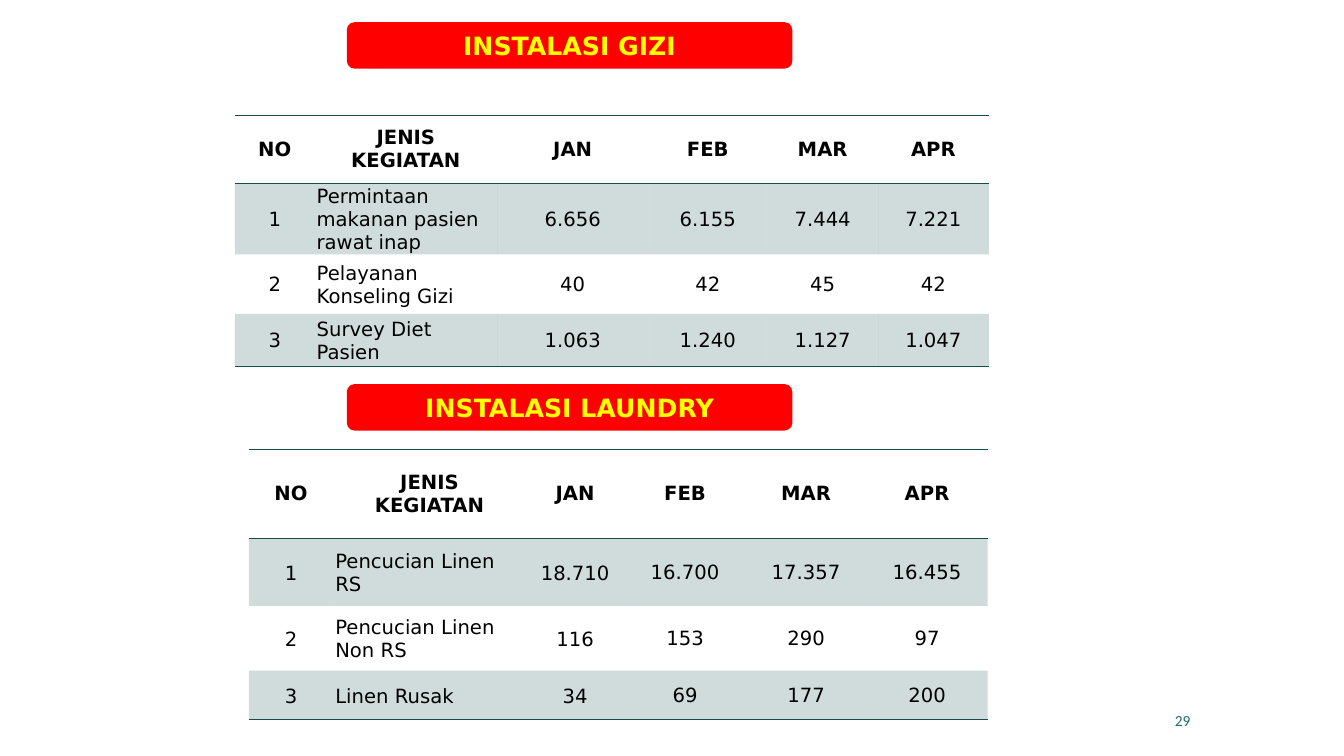
import pptx
import pptx.util
import pptx.dml.color
import pptx.enum.shapes
import pptx.enum.text
import pptx.oxml
import pptx.oxml.ns

Cm = pptx.util.Cm
Pt = pptx.util.Pt
RGBColor = pptx.dml.color.RGBColor
ALIGN = pptx.enum.text.PP_ALIGN
MIDDLE = pptx.enum.text.MSO_ANCHOR.MIDDLE
qn = pptx.oxml.ns.qn

RED = RGBColor(0xFF, 0x00, 0x00)
YELLOW = RGBColor(0xFF, 0xFF, 0x00)
BLACK = RGBColor(0x00, 0x00, 0x00)
TEAL = RGBColor(0x16, 0x4B, 0x4F)
PAGE_TEAL = RGBColor(0x1F, 0x69, 0x6F)
BAND_ALPHA = "20000"
NO_STYLE = "{2D5ABB26-0587-4C30-8999-92F81FD0307C}"

HEADER = ["NO", "JENIS KEGIATAN", "JAN", "FEB", "MAR", "APR"]
NUTRITION = [
    HEADER,
    ["1", "Permintaan makanan pasien rawat inap", "6.656", "6.155", "7.444", "7.221"],
    ["2", "Pelayanan Konseling Gizi", "40", "42", "45", "42"],
    ["3", "Survey Diet Pasien", "1.063", "1.240", "1.127", "1.047"],
]
LAUNDRY = [
    HEADER,
    ["1", "Pencucian Linen RS", "18.710", "16.700", "17.357", "16.455"],
    ["2", "Pencucian Linen Non RS", "116", "153", "290", "97"],
    ["3", "Linen Rusak", "34", "69", "177", "200"],
]


def write_text(frame, text, size=14, font="DejaVu Sans", color=BLACK, bold=False, align=ALIGN.CENTER):
    """Put one formatted paragraph into a text frame."""
    para = frame.paragraphs[0]
    para.alignment = align
    span = para.add_run()
    span.text = text
    span.font.size = Pt(size)
    span.font.name = font
    span.font.bold = bold
    span.font.color.rgb = color


def add_banner(page, text, top):
    """Add a red rounded section heading."""
    kind = pptx.enum.shapes.MSO_SHAPE.ROUNDED_RECTANGLE
    box = page.shapes.add_shape(kind, Cm(8.74), Cm(top), Cm(11.23), Cm(1.17))
    box.shadow.inherit = False
    box.fill.solid()
    box.fill.fore_color.rgb = RED
    box.line.fill.background()
    box.text_frame.word_wrap = True
    box.text_frame.vertical_anchor = MIDDLE
    write_text(box.text_frame, text, size=18, color=YELLOW, bold=True)


def add_rule(cell, side):
    """Draw a teal border along one side of a cell."""
    namespace = pptx.oxml.ns.nsdecls("a")
    cell._tc.get_or_add_tcPr().append(pptx.oxml.parse_xml(
        f'<a:{side} {namespace} w="{Pt(1)}"><a:solidFill>'
        f'<a:srgbClr val="{TEAL}"/></a:solidFill></a:{side}>'))


def fill_band(cell):
    """Fill a cell with translucent teal."""
    cell.fill.solid()
    cell.fill.fore_color.rgb = TEAL
    color = cell._tc.tcPr.find(qn("a:solidFill")).find(qn("a:srgbClr"))
    pptx.oxml.ns.qn("a:alpha")
    color.append(pptx.oxml.parse_xml(
        f'<a:alpha {pptx.oxml.ns.nsdecls("a")} val="{BAND_ALPHA}"/>'))


def set_margins(cell, side, top, bottom):
    """Set the inner margins of a cell in centimetres."""
    cell.margin_left = cell.margin_right = Cm(side)
    cell.margin_top = Cm(top)
    cell.margin_bottom = Cm(bottom)


def add_activity_table(page, rows, left, top, widths, heights, header_margin, wide_columns):
    """Add a banded table of monthly activity counts."""
    frame = page.shapes.add_table(len(rows), len(widths), Cm(left), Cm(top),
                                  Cm(sum(widths)), Cm(sum(heights)))
    table = frame.table
    table._tbl.tblPr.find(qn("a:tableStyleId")).text = NO_STYLE
    for column, width in zip(table.columns, widths):
        column.width = Cm(width)
    for line, height in zip(table.rows, heights):
        line.height = Cm(height)
    for row, texts in enumerate(rows):
        for column, text in enumerate(texts):
            cell = table.cell(row, column)
            header = row == 0
            if header:
                set_margins(cell, 0.51, header_margin, header_margin)
                add_rule(cell, "lnT")
            else:
                margin = 0.05 if column < wide_columns else 0.03
                set_margins(cell, margin, margin, 0)
            if header or row == len(rows) - 1:
                add_rule(cell, "lnB")
            if row % 2:
                fill_band(cell)
            else:
                cell.fill.background()
            cell.vertical_anchor = MIDDLE
            align = ALIGN.LEFT if column == 1 and not header else ALIGN.CENTER
            write_text(cell.text_frame, text, bold=header, align=align)


def add_page_number(page, text):
    """Add the page number at the lower right."""
    box = page.shapes.add_textbox(Cm(22.35), Cm(17.65), Cm(7.9), Cm(1.02))
    box.text_frame.word_wrap = True
    box.text_frame.vertical_anchor = MIDDLE
    write_text(box.text_frame, text, size=11, font="Calibri", color=PAGE_TEAL, align=ALIGN.RIGHT)


def main():
    """Build the slide and save the deck."""
    deck = pptx.Presentation()
    deck.slide_width = Cm(33.87)
    deck.slide_height = Cm(19.05)
    page = deck.slides.add_slide(deck.slide_layouts[6])
    add_activity_table(page, NUTRITION, 5.92, 2.92, [2.01, 4.6, 3.81, 3, 2.79, 2.79],
                       [1.7, 1.4, 1.5, 1.32], header_margin=0.2, wide_columns=2)
    add_page_number(page, "29")
    add_activity_table(page, LAUNDRY, 6.27, 11.33, [2.13, 4.85, 2.49, 3.05, 3.05, 3.05],
                       [2.24, 1.7, 1.63, 1.24], header_margin=0.18, wide_columns=3)
    add_banner(page, "INSTALASI GIZI", 0.56)
    add_banner(page, "INSTALASI LAUNDRY", 9.68)
    deck.save("out.pptx")


if __name__ == "__main__":
    main()
